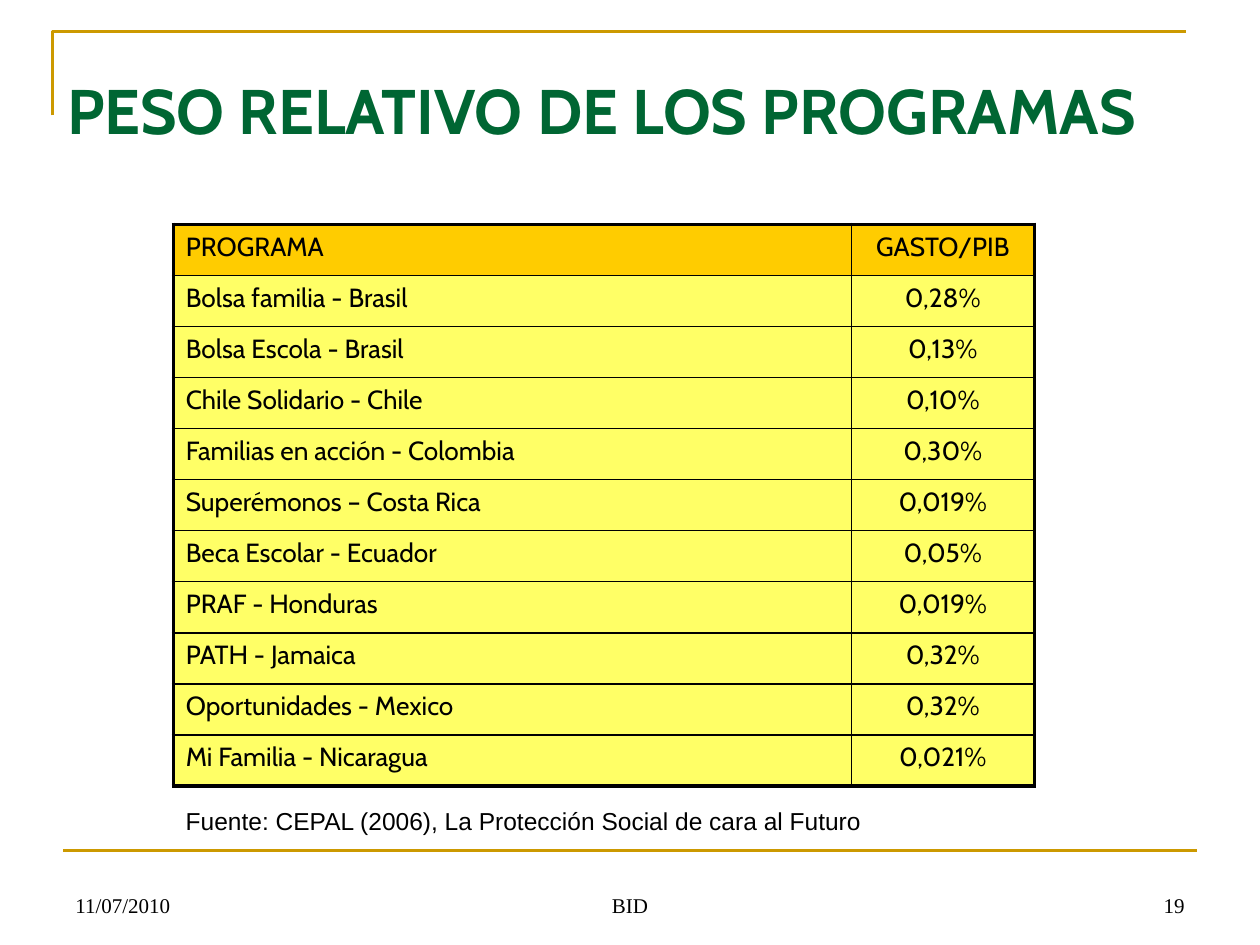
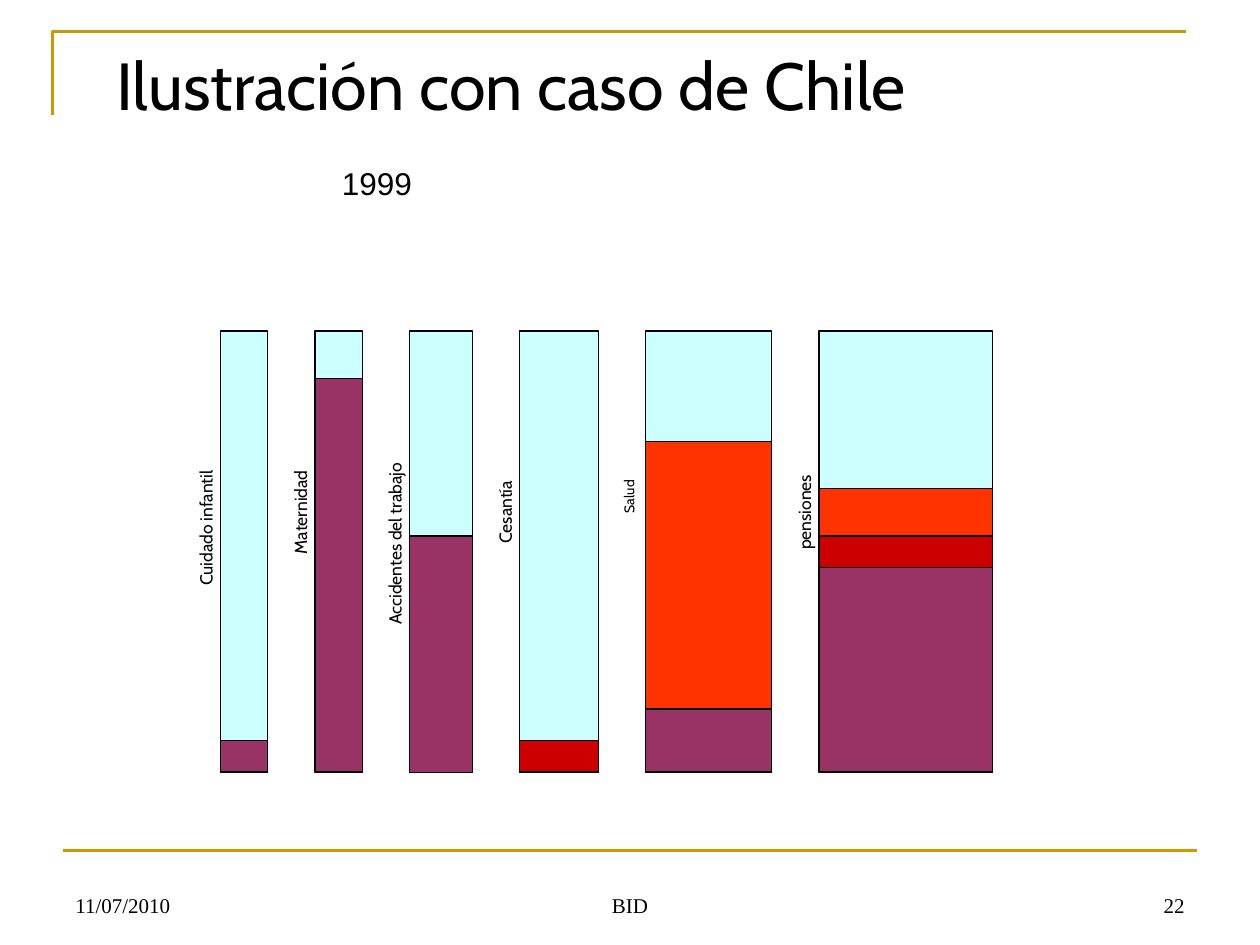
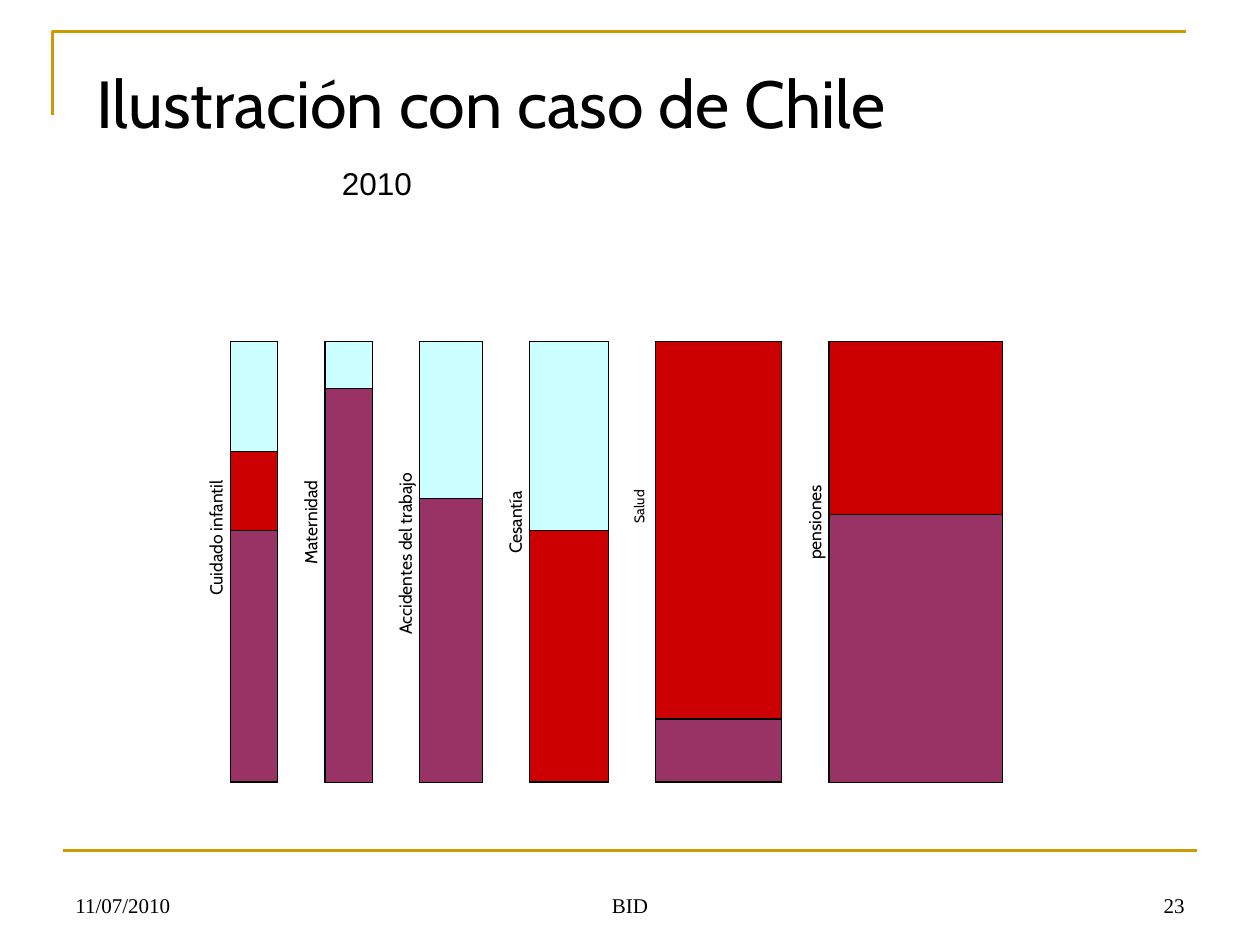
from lxml import etree
from pptx import Presentation
from pptx.dml.color import RGBColor
from pptx.enum.shapes import MSO_CONNECTOR, MSO_SHAPE
from pptx.enum.text import MSO_ANCHOR, PP_ALIGN
from pptx.oxml.ns import qn
from pptx.util import Pt

LEFT, MID, RIGHT = PP_ALIGN.LEFT, PP_ALIGN.CENTER, PP_ALIGN.RIGHT
TOP, BOTTOM = MSO_ANCHOR.TOP, MSO_ANCHOR.BOTTOM
RECT, STRAIGHT = MSO_SHAPE.RECTANGLE, MSO_CONNECTOR.STRAIGHT

COLORS = {
    "black": "000000", "green": "006633", "gold": "CC9900",
    "amber": "FFCC00", "yellow": "FFFF66", "sky": "CCFFFF",
    "plum": "993366", "red": "CC0000", "orange": "FF3300",
}
CABIN, ARIAL, TIMES = "Cabin", "Arial", "Times New Roman"

PROGRAMS = [
    ("PROGRAMA", "GASTO/PIB"),
    ("Bolsa familia - Brasil", "0,28%"),
    ("Bolsa Escola - Brasil", "0,13%"),
    ("Chile Solidario - Chile", "0,10%"),
    ("Familias en acción - Colombia", "0,30%"),
    ("Superémonos – Costa Rica", "0,019%"),
    ("Beca Escolar - Ecuador", "0,05%"),
    ("PRAF - Honduras", "0,019%"),
    ("PATH - Jamaica", "0,32%"),
    ("Oportunidades - Mexico", "0,32%"),
    ("Mi Familia - Nicaragua", "0,021%"),
]

UNIT, GAP, FULL = 9, 3, 28
RISKS = [
    ("Cuidado infantil", 3, 8, 12.5, 10),
    ("Maternidad", 3, 6, 11.5, 10),
    ("Accidentes del trabajo", 4, 11, 13.5, 10),
    ("Cesantía", 5, 5, 11.5, 10),
    ("Salud", 8, 3, 10.5, 8),
    ("pensiones", 11, 6, 11.5, 10),
]
COVER_1999 = [
    [("plum", 2)],
    [("plum", 25)],
    [("plum", 15)],
    [("red", 2)],
    [("plum", 4), ("orange", 17)],
    [("plum", 13), ("red", 2), ("orange", 3)],
]
COVER_2010 = [
    [("plum", 16), ("red", 5)],
    [("plum", 25)],
    [("plum", 18)],
    [("red", 16)],
    [("plum", 4), ("red", 24)],
    [("plum", 17), ("red", 11)],
]


def rgb(name):
    return RGBColor.from_string(COLORS[name])


class Deck:
    def __init__(self):
        self.prs = Presentation()
        self.prs.slide_width, self.prs.slide_height = Pt(720), Pt(540)
        self.shapes = None

    def page(self, number):
        self.shapes = self.prs.slides.add_slide(self.prs.slide_layouts[6]).shapes
        self.frame()
        self.line(36, 486, 684, 486)
        for left, width, text, align in [
            (36, 168, "11/07/2010", LEFT),
            (246, 228, "BID", MID),
            (516, 168, str(number), RIGHT),
        ]:
            self.text(left, 491.75, width, 36, text, 12, TIMES, align=align,
                      anchor=BOTTOM)

    def frame(self):
        pen = self.shapes.build_freeform(Pt(30), Pt(66))
        pen.add_line_segments([(Pt(30), Pt(18)), (Pt(678), Pt(18))], close=False)
        shape = pen.convert_to_shape()
        shape.shadow.inherit = False
        shape.fill.background()
        self.stroke(shape, "gold", 1.5)

    def line(self, x1, y1, x2, y2):
        rule = self.shapes.add_connector(STRAIGHT, Pt(x1), Pt(y1), Pt(x2), Pt(y2))
        self.stroke(rule, "gold", 1.5)
        etree.SubElement(rule.element.spPr, qn("a:effectLst"))

    def stroke(self, shape, color, width):
        shape.line.color.rgb = rgb(color)
        shape.line.width = Pt(width)

    def style(self, para, size, font, color="black", bold=False, align=LEFT):
        para.alignment = align
        para.font.size = Pt(size)
        para.font.name = font
        para.font.bold = bold
        para.font.color.rgb = rgb(color)

    def text(self, left, top, width, height, text, size, font, color="black",
             bold=False, align=LEFT, anchor=TOP, wrap=True, turn=0, inset=7.2):
        box = self.shapes.add_textbox(Pt(left), Pt(top), Pt(width), Pt(height))
        box.rotation = turn
        frame = box.text_frame
        frame.word_wrap = wrap
        frame.vertical_anchor = anchor
        frame.margin_left = frame.margin_right = Pt(inset)
        frame.text = text
        self.style(frame.paragraphs[0], size, font, color, bold, align)

    def block(self, left, top, width, height, color):
        shape = self.shapes.add_shape(RECT, Pt(left), Pt(top), Pt(width), Pt(height))
        shape.shadow.inherit = False
        shape.fill.solid()
        shape.fill.fore_color.rgb = rgb(color)
        self.stroke(shape, "black", 0.75)

    def border(self, cell, edges):
        props = cell._tc.get_or_add_tcPr()
        for side, outer in edges.items():
            width = Pt(2.25 if outer else 1)
            edge = etree.SubElement(props, qn(f"a:ln{side}"), w=str(width))
            fill = etree.SubElement(edge, qn("a:solidFill"))
            etree.SubElement(fill, qn("a:srgbClr"), val=COLORS["black"])

    def table(self, left, top, widths, height, rows):
        last_row, last_col = len(rows) - 1, len(widths) - 1
        grid = self.shapes.add_table(len(rows), len(widths), Pt(left), Pt(top),
                                     Pt(sum(widths)), Pt(height)).table
        grid.first_row = grid.horz_banding = False
        for col, width in zip(grid.columns, widths):
            col.width = Pt(width)
        for r, row in enumerate(rows):
            for c, value in enumerate(row):
                cell = grid.cell(r, c)
                self.border(cell, {"L": c == 0, "R": c == last_col,
                                   "T": r == 0, "B": r == last_row})
                cell.fill.solid()
                cell.fill.fore_color.rgb = rgb("yellow" if r else "amber")
                cell.text = value
                self.style(cell.text_frame.paragraphs[0], 15, CABIN,
                           align=MID if c else LEFT)

    def bars(self, left, top, cover):
        for (name, span, length, center, size), parts in zip(RISKS, cover):
            width = span * UNIT
            self.block(left, top, width, FULL * UNIT, "sky")
            base = top + FULL * UNIT
            for color, share in parts:
                base -= share * UNIT
                self.block(left, base, width, share * UNIT, color)
            long = length * UNIT
            self.text(left - 13.5 - long / 2, top + (center - 0.5) * UNIT, long,
                      UNIT, name, size, CABIN, align=MID, wrap=False, turn=270,
                      inset=0)
            left += width + GAP * UNIT

    def case(self, number, year, title_at, bars_at, cover):
        self.page(number)
        self.text(*title_at, 578, 67, "Ilustración con caso de Chile", 38, CABIN)
        self.bars(*bars_at, cover)
        self.text(187.5, 90, 55, 29, year, 18, ARIAL, align=RIGHT, wrap=False)


def main():
    deck = Deck()
    deck.page(19)
    deck.text(31.25, 37.5, 636, 43, "PESO RELATIVO DE LOS PROGRAMAS", 36, CABIN,
              "green", bold=True)
    deck.table(99, 128.25, [387.5, 104.5], 321, PROGRAMS)
    deck.text(99, 457, 516, 24,
              "Fuente: CEPAL (2006), La Protección Social de cara al Futuro", 14, ARIAL)
    deck.case(22, "1999", (59.5, 21.5), (126, 189.25), COVER_1999)
    deck.case(23, "2010", (48, 31.75), (131.75, 195), COVER_2010)
    deck.prs.save("out.pptx")


if __name__ == "__main__":
    main()
